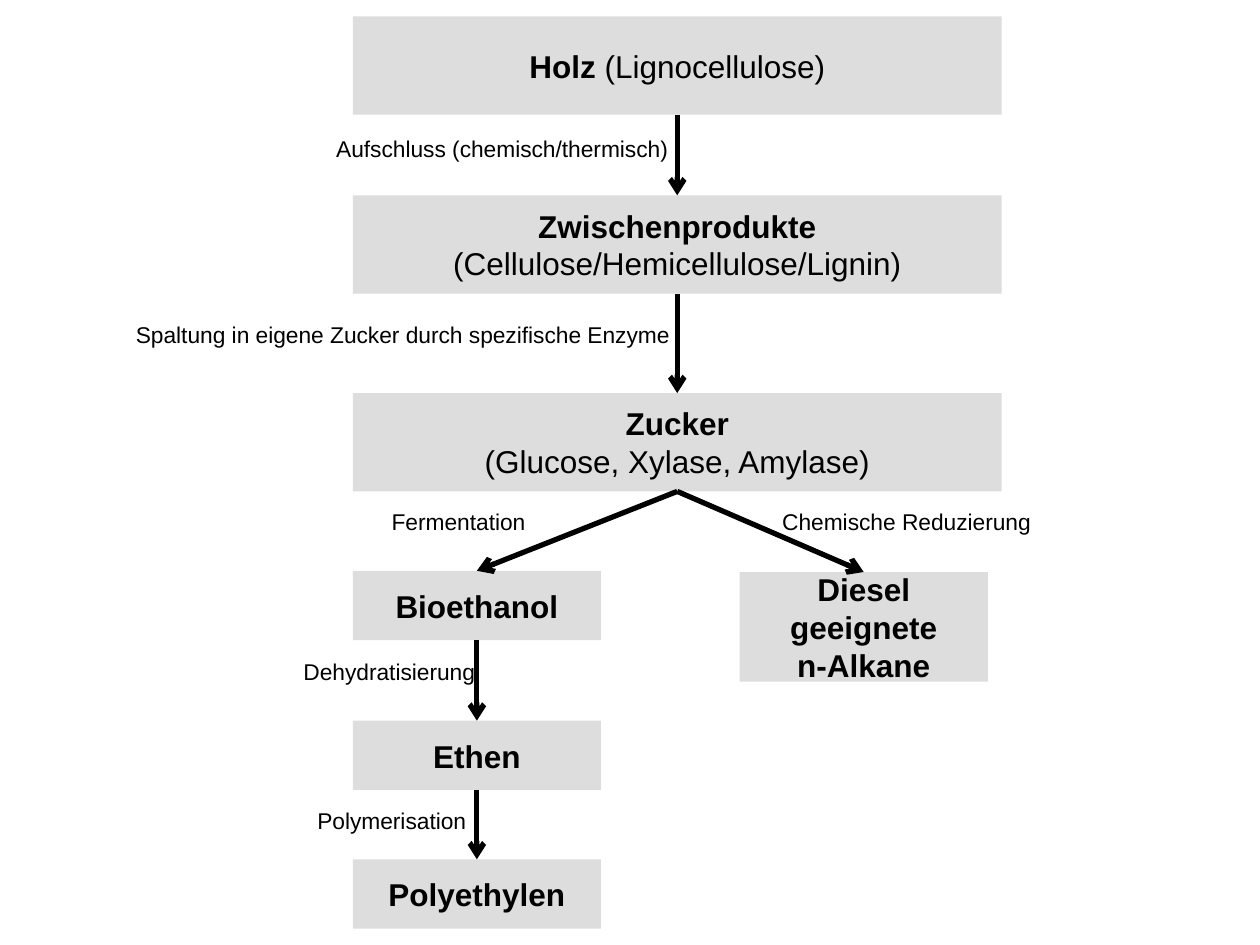
from lxml.etree import SubElement
from pptx import Presentation
from pptx.dml.color import RGBColor
from pptx.enum.shapes import MSO_CONNECTOR, MSO_SHAPE
from pptx.enum.text import MSO_ANCHOR, MSO_AUTO_SIZE, PP_ALIGN
from pptx.oxml.ns import qn
from pptx.util import Inches, Pt

BLACK = RGBColor(0x00, 0x00, 0x00)
GREY = RGBColor(0xDD, 0xDD, 0xDD)

COLUMNS, ROWS = 100, 75
TOP, BOTTOM = 0, 2
LEFT = 28
WIDE, NARROW = (51.5, 7.8), (19.7, 5.5)


class FlowChart:
    """Draws on one slide; lengths are columns and rows of a 100 x 75 grid."""

    font = "Arial"
    box_size = Pt(18)
    label_size = Pt(13)
    line_width = Pt(3)

    def __init__(self, deck):
        self.slide = deck.slides.add_slide(deck.slide_layouts[6])
        self.column = deck.slide_width / COLUMNS
        self.row = deck.slide_height / ROWS

    def place(self, left, top, width, height):
        return (round(left * self.column), round(top * self.row),
                round(width * self.column), round(height * self.row))

    def style(self, span, size, bold=False):
        span.font.name = self.font
        span.font.size = size
        span.font.bold = bold
        span.font.color.rgb = BLACK

    def box(self, left, top, size, *lines):
        """Add a grey box; each line is a list of spans, bold unless in brackets."""
        box = self.slide.shapes.add_shape(
            MSO_SHAPE.RECTANGLE, *self.place(left, top, *size))
        box.shadow.inherit = False
        box.fill.solid()
        box.fill.fore_color.rgb = GREY
        box.line.fill.background()
        frame = box.text_frame
        frame.word_wrap = True
        frame.vertical_anchor = MSO_ANCHOR.MIDDLE
        for number, texts in enumerate(lines):
            para = frame.add_paragraph() if number else frame.paragraphs[0]
            para.alignment = PP_ALIGN.CENTER
            for text in texts:
                span = para.add_run()
                span.text = text
                self.style(span, self.box_size, bold=not text.startswith("("))
        return box

    def label(self, left, top, width, text):
        box = self.slide.shapes.add_textbox(*self.place(left, top, width, 3.2))
        frame = box.text_frame
        frame.word_wrap = False
        frame.auto_size = MSO_AUTO_SIZE.SHAPE_TO_FIT_TEXT
        frame.text = text
        self.style(frame.paragraphs[0].runs[0], self.label_size)

    def arrow(self, source, target):
        """Join the bottom of source to the top of target."""
        arrow = self.slide.shapes.add_connector(MSO_CONNECTOR.STRAIGHT, 0, 0, 0, 0)
        arrow.begin_connect(source, BOTTOM)
        arrow.end_connect(target, TOP)
        arrow.line.color.rgb = BLACK
        arrow.line.width = self.line_width
        SubElement(arrow.line._get_or_add_ln(), qn("a:tailEnd"), type="arrow")
        SubElement(arrow._element.spPr, qn("a:effectLst"))


def main():
    deck = Presentation()
    deck.slide_width, deck.slide_height = Inches(10), Inches(7.5)
    chart = FlowChart(deck)

    wood = chart.box(LEFT, 1.3, WIDE, ["Holz ", "(Lignocellulose)"])
    intermediates = chart.box(LEFT, 15.5, WIDE, ["Zwischenprodukte"],
                              ["(Cellulose/Hemicellulose/Lignin)"])
    sugar = chart.box(LEFT, 31.2, WIDE, ["Zucker"], ["(Glucose, Xylase, Amylase)"])
    ethanol = chart.box(LEFT, 45.3, NARROW, ["Bioethanol"])
    alkanes = chart.box(58.7, 45.4, (19.7, 8.7), ["Diesel"], ["geeignete"], ["n-Alkane"])
    ethene = chart.box(LEFT, 57.2, NARROW, ["Ethen"])
    polyethylene = chart.box(LEFT, 68.2, NARROW, ["Polyethylen"])

    for source, target in [(wood, intermediates), (intermediates, sugar),
                           (sugar, ethanol), (sugar, alkanes),
                           (ethanol, ethene), (ethene, polyethylene)]:
        chart.arrow(source, target)

    for left, top, width, text in [
        (25.7, 10.2, 28.7, "Aufschluss (chemisch/thermisch)"),
        (9.8, 25, 45, "Spaltung in eigene Zucker durch spezifische Enzyme"),
        (30.1, 39.8, 12.8, "Fermentation"),
        (61.1, 39.8, 22, "Chemische Reduzierung"),
        (23.1, 51.7, 15.8, "Dehydratisierung"),
        (24.2, 63.5, 14, "Polymerisation"),
    ]:
        chart.label(left, top, width, text)

    deck.save("out.pptx")


if __name__ == "__main__":
    main()
